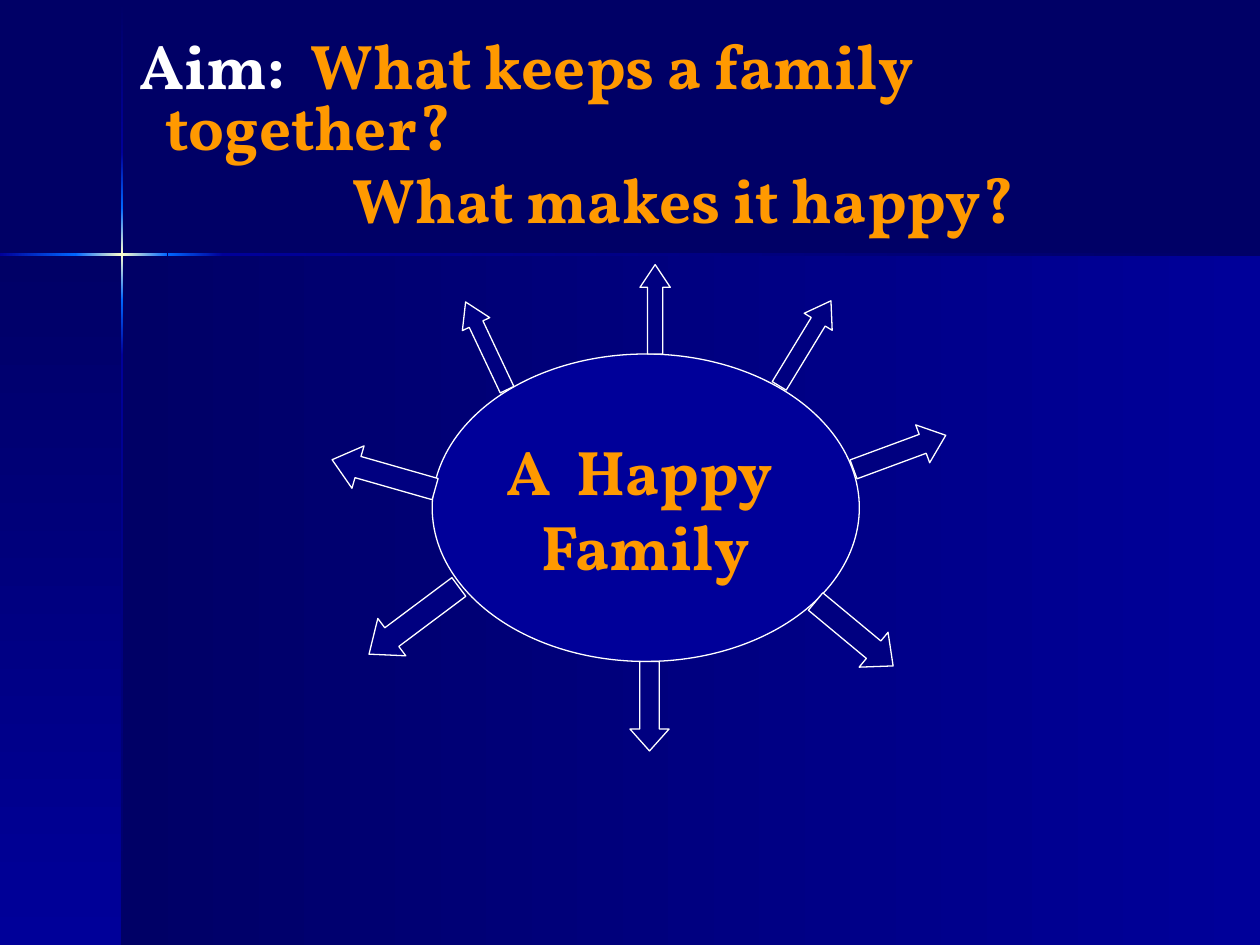
from lxml.etree import SubElement
from pptx import Presentation
from pptx.dml.color import RGBColor
from pptx.enum.shapes import MSO_SHAPE
from pptx.enum.text import MSO_ANCHOR, MSO_AUTO_SIZE, PP_ALIGN
from pptx.oxml.ns import qn
from pptx.util import Inches, Pt

COLS, ROWS = 100, 75
CELL = Inches(10) / COLS
NIGHT = RGBColor(0x00, 0x00, 0x66)
NAVY = RGBColor(0x00, 0x00, 0x80)
ROYAL = RGBColor(0x00, 0x00, 0x99)
AZURE = RGBColor(0x00, 0x66, 0xFF)
CREAM = RGBColor(0xFF, 0xFF, 0xCC)
WHITE = RGBColor(0xFF, 0xFF, 0xFF)
ORANGE = RGBColor(0xFF, 0x99, 0x00)
GLOW = (AZURE, CREAM, AZURE)

UP, DOWN = MSO_SHAPE.UP_ARROW, MSO_SHAPE.DOWN_ARROW
ARROWS = [
    (UP, 16.55, 10, 3.6, 8, 129.7, 0.56),
    (UP, -18.4, 8.95, 3.7, 8.9, 233.2, 0.61),
    (UP, -20.8, -2.65, 3.5, 8.5, 285.9, 0.61),
    (UP, 20.15, -4.4, 3.2, 7.8, 69.7, 0.61),
    (UP, 0.75, -15.75, 2.4, 7.1, 0, 0.75),
    (DOWN, 0.3, 15.75, 3.1, 7.1, 0, 0.56),
    (UP, -12.65, -12.85, 2.4, 7.7, 334.7, 0.81),
    (UP, 12.65, -13.05, 2.6, 7.9, 31.3, 0.75),
]


def grid(*cells):
    """Turn grid cells into slide lengths."""
    return [round(n * CELL) for n in cells]


def write(para, text, color=ORANGE, size=36, font="Vollkorn", bold=True):
    """Add a formatted run of text to a paragraph."""
    run = para.add_run()
    run.text = text
    run.font.name, run.font.size, run.font.bold = font, Pt(size), bold
    run.font.color.rgb = color


def draw(slide, kind, box, fill=NAVY):
    """Add a filled shape with a thin white outline."""
    shape = slide.shapes.add_shape(kind, *grid(*box))
    shape.shadow.inherit = False
    shape.fill.solid()
    shape.fill.fore_color.rgb = fill
    shape.line.color.rgb = WHITE
    shape.line.width = Pt(0.75)
    return shape


def blend(slide, box, colors, down):
    """Add a borderless panel whose colours run across or down."""
    panel = draw(slide, MSO_SHAPE.RECTANGLE, box)
    panel.line.fill.background()
    panel.fill.gradient()
    panel.fill.gradient_angle = 270 if down else 0
    stops = panel._element.spPr.find(".//" + qn("a:gsLst"))
    stops.clear()
    for i, color in enumerate(colors):
        place = str(100000 * i // (len(colors) - 1))
        stop = SubElement(stops, qn("a:gs"), pos=place)
        SubElement(stop, qn("a:srgbClr"), val=str(color))


def beam(slide, marks, mid, down):
    """Draw a thin ray in stretches between marks along one axis."""
    tones = [(NIGHT, ROYAL), (ROYAL, AZURE), GLOW, (AZURE, ROYAL), (ROYAL, NIGHT)]
    for start, end, colors in zip(marks, marks[1:], tones[-len(marks) + 1:]):
        size = end - start
        box = (mid - 0.1, start, 0.2, size) if down else (start, mid - 0.1, size, 0.2)
        blend(slide, box, colors, down)


def scene(slide, left, top):
    """Paint the backdrop around the crossing of the two rays."""
    slide.background.fill.solid()
    slide.background.fill.fore_color.rgb = NIGHT
    blend(slide, (left, top, COLS - left, ROWS - top), (NIGHT, ROYAL), False)
    blend(slide, (0, top, left, ROWS - top), (NIGHT, ROYAL), True)
    beam(slide, [0.1, 12.1, 16.5, 23.8, 28.2, ROWS], left, True)
    beam(slide, [0, 6, 13.3, 17.7, COLS], top, False)


def aim(slide, box):
    """Fill the body placeholder with the aim of the lesson."""
    body = slide.placeholders[1]
    slide.shapes._spTree.append(body._element)
    body.left, body.top, body.width, body.height = grid(*box)
    frame = body.text_frame
    frame.auto_size = MSO_AUTO_SIZE.NONE
    frame.vertical_anchor = MSO_ANCHOR.TOP
    first, second = frame.paragraphs[0], frame.add_paragraph()
    for para, margin, indent in ((first, 3.8, -2), (second, 18.7, 0)):
        para.line_spacing = 0.8
        props = para._p.get_or_add_pPr()
        props.set("marL", str(grid(margin)[0]))
        props.set("indent", str(grid(indent)[0]))
        SubElement(props, qn("a:buNone"))
    write(first, "Aim:  ", color=WHITE)
    write(first, "What keeps a family together?")
    write(second, "What makes it happy?")


def burst(slide, box):
    """Draw the hub in its box with arrows around its centre."""
    left, top, width, height = box
    hub = draw(slide, MSO_SHAPE.OVAL, box, fill=ROYAL)
    frame = hub.text_frame
    frame.word_wrap = False
    frame.vertical_anchor = MSO_ANCHOR.MIDDLE
    for para, text in ((frame.paragraphs[0], "A  Happy "),
                       (frame.add_paragraph(), "Family")):
        para.alignment = PP_ALIGN.CENTER
        write(para, text)
    for kind, x, y, wide, tall, turn, head in ARROWS:
        spot = (left + width / 2 + x - wide / 2, top + height / 2 + y - tall / 2)
        arrow = draw(slide, kind, (*spot, wide, tall))
        arrow.rotation = turn
        arrow.adjustments[0], arrow.adjustments[1] = 0.5, head


def main():
    """Build the slide and save it."""
    deck = Presentation()
    deck.slide_width, deck.slide_height = grid(COLS, ROWS)
    slide = deck.slides.add_slide(deck.slide_layouts[1])
    title = slide.shapes.title._element
    title.getparent().remove(title)
    scene(slide, 9.7, 20.2)
    aim(slide, (8.3, 2.8, 88.6, 12.6))
    burst(slide, (34.3, 28.1, 33.9, 24.4))
    deck.save("out.pptx")


if __name__ == "__main__":
    main()
